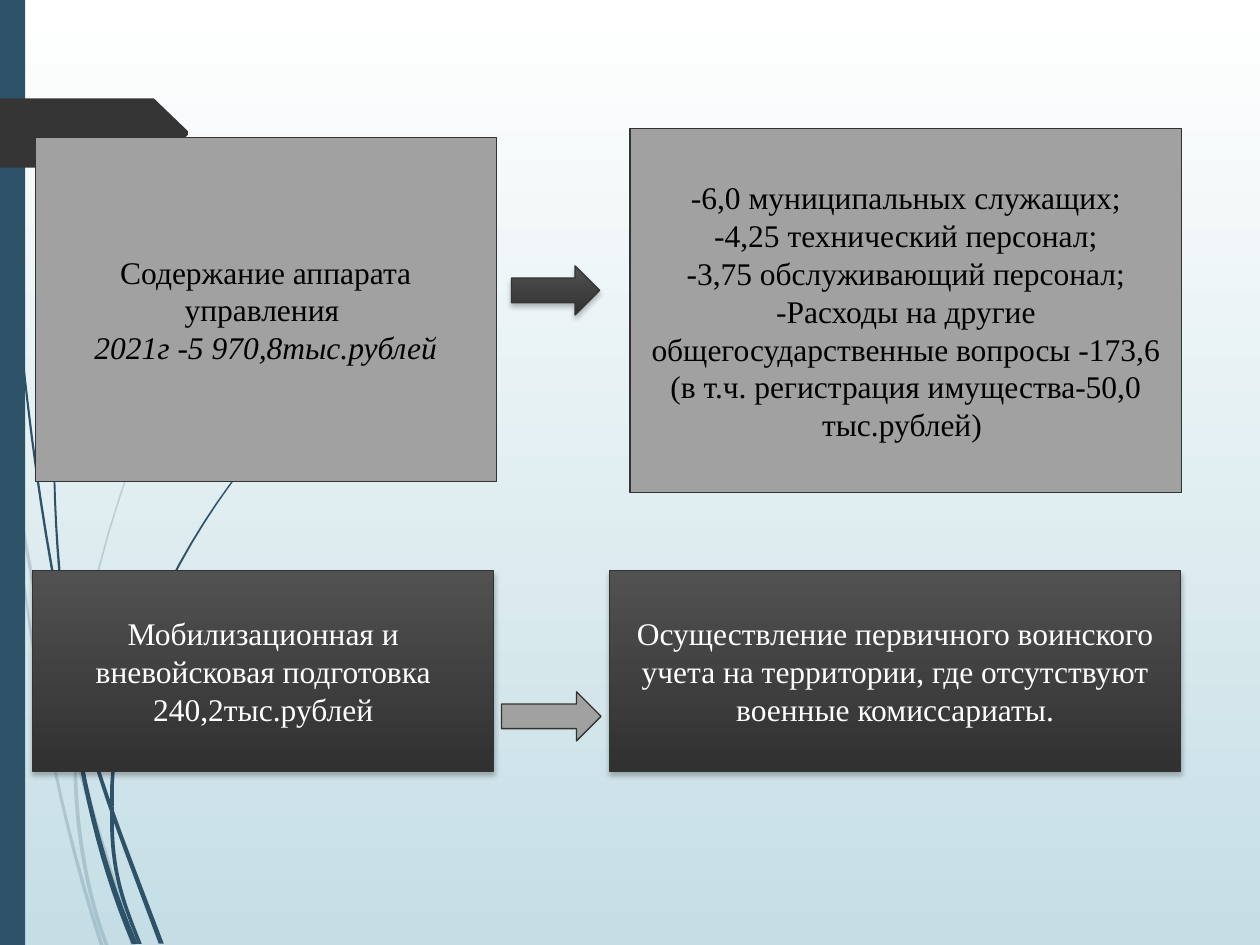
from dataclasses import dataclass

from lxml import etree
from pptx import Presentation
from pptx.dml.color import RGBColor
from pptx.enum.shapes import MSO_SHAPE
from pptx.enum.text import MSO_ANCHOR, PP_ALIGN
from pptx.oxml.ns import qn
from pptx.util import Emu, Pt

RECT, ARROW = MSO_SHAPE.RECTANGLE, MSO_SHAPE.RIGHT_ARROW
CENTER, MIDDLE = PP_ALIGN.CENTER, MSO_ANCHOR.MIDDLE
PX = 9144  # EMU in one px, 100 px to the inch
CURVE_STEPS = 18
FONT = "Times New Roman"
COLORS = {
    "sky_top": "FFFFFF", "sky_bottom": "C5DEE5", "navy": "2E5369", "tag": "353535",
    "grey": "A1A1A1", "dark_top": "515151", "dark_bottom": "313131",
    "edge": "333333", "black": "000000", "white": "FFFFFF",
}
Point = tuple[float, float]


@dataclass(frozen=True)
class Strand:
    """A cubic through four evenly timed points, tapering between two widths."""
    through: tuple[Point, Point, Point, Point]
    start_width: int
    end_width: int


@dataclass(frozen=True)
class Block:
    left: int
    top: int
    width: int
    height: int
    dark: bool
    lines: tuple[str, ...] = ()
    kind: int = RECT
    italic_last: bool = False


PALE_STRANDS = (
    Strand(((0, 290), (21, 435), (52, 570), (106, 751)), 2, 4),
    Strand(((8, 350), (20, 470), (43, 608), (81, 751)), 1, 3),
    Strand(((217, 153), (150, 262), (87, 420), (60, 590)), 0, 2),
    Strand(((60, 590), (62, 650), (71, 705), (85, 751)), 3, 3),
)
NAVY_STRANDS = (
    Strand(((2, 0), (8, 160), (22, 320), (46, 477)), 1, 2),
    Strand(((46, 477), (59, 575), (78, 665), (107, 749)), 2, 5),
    Strand(((58, 141), (47, 250), (43, 360), (49, 472)), 0, 2),
    Strand(((49, 472), (65, 565), (90, 647), (128, 749)), 2, 4),
    Strand(((216, 344), (152, 431), (105, 535), (89, 640)), 1, 3),
    Strand(((89, 640), (91, 683), (99, 717), (111, 749)), 3, 3),
)
TAG_CORNERS = [(0, 78), (122, 78), (149, 104), (149, 107), (124, 132), (121, 133), (0, 133)]

BLOCKS = (
    Block(28, 109, 366, 273, False,
          ("Содержание аппарата управления ", "2021г -5 970,8тыс.рублей"), italic_last=True),
    Block(26, 453, 366, 159, True,
          ("Мобилизационная и вневойсковая подготовка", "240,2тыс.рублей")),
    Block(500, 102, 438, 289, False,
          ("-6,0 муниципальных служащих;", "-4,25 технический персонал;",
           "-3,75 обслуживающий персонал;",
           "-Расходы на другие общегосударственные вопросы -173,6 "
           "(в т.ч. регистрация имущества-50,0 тыс.рублей) ")),
    Block(484, 453, 453, 159, True,
          ("Осуществление первичного воинского учета на территории, "
           "где отсутствуют военные комиссариаты.",)),
    Block(406, 211, 70, 39, True, kind=ARROW),
    Block(398, 549, 79, 39, False, kind=ARROW),
)


def rgb(name: str) -> RGBColor:
    return RGBColor.from_string(COLORS[name])


def fill_solid(shape, color: str) -> None:
    shape.shadow.inherit = False
    shape.fill.solid()
    shape.fill.fore_color.rgb = rgb(color)
    shape.line.fill.background()


def fill_gradient(fill, top: str, bottom: str) -> None:
    fill.gradient()
    fill.gradient_angle = 270  # counter-clockwise: runs downwards
    for stop, color in zip(fill.gradient_stops, (top, bottom)):
        stop.color.rgb = rgb(color)


def add_alpha(color_element, percent: int) -> None:
    etree.SubElement(color_element, qn("a:alpha"), val=str(percent * 1000))


def add_drop_shadow(shape) -> None:
    effects = shape.element.spPr.find(qn("a:effectLst"))
    outer = etree.SubElement(effects, qn("a:outerShdw"), blurRad=str(Pt(3)), dist=str(Pt(2)),
                             dir="5400000", rotWithShape="0")
    add_alpha(etree.SubElement(outer, qn("a:srgbClr"), val=COLORS["black"]), 25)


def strand_outline(strand: Strand) -> list[Point]:
    left, right = [], []
    for step in range(CURVE_STEPS + 1):
        t = step / CURVE_STEPS
        u = 3 * t
        weights = (-(u - 1) * (u - 2) * (u - 3) / 6, u * (u - 2) * (u - 3) / 2,
                   -u * (u - 1) * (u - 3) / 2, u * (u - 1) * (u - 2) / 6)
        x, y = (sum(w * p[axis] for w, p in zip(weights, strand.through)) for axis in (0, 1))
        half = (strand.start_width * (1 - t) + strand.end_width * t) / 2
        left.append((x - half, y))
        right.append((x + half, y))
    return left + right[::-1]


def add_outline(shapes, outline: list[Point], color: str, opacity: int = 100) -> None:
    corners = [(round(x * PX), round(y * PX)) for x, y in outline]
    builder = shapes.build_freeform(*corners[0])
    builder.add_line_segments(corners[1:], close=True)
    shape = builder.convert_to_shape()
    fill_solid(shape, color)
    if opacity < 100:
        add_alpha(shape.element.spPr.find(qn("a:solidFill"))[0], opacity)


def add_block(shapes, block: Block) -> None:
    shape = shapes.add_shape(block.kind, *(Emu(n * PX) for n in (
        block.left, block.top, block.width, block.height)))
    fill_solid(shape, "grey")
    if block.dark:
        fill_gradient(shape.fill, "dark_top", "dark_bottom")
        add_drop_shadow(shape)
    shape.line.color.rgb = rgb("edge")
    shape.line.width = Pt(0.75)
    frame = shape.text_frame
    frame.word_wrap, frame.vertical_anchor = True, MIDDLE
    for i, line in enumerate(block.lines):
        paragraph = frame.add_paragraph() if i else frame.paragraphs[0]
        paragraph.text, paragraph.alignment = line, CENTER
        font = paragraph.font
        font.name, font.size = FONT, Pt(18)
        font.color.rgb = rgb("white" if block.dark else "black")
        if block.italic_last and i == len(block.lines) - 1:
            font.italic = True


def main() -> None:
    deck = Presentation()
    deck.slide_width, deck.slide_height = Emu(1000 * PX), Emu(750 * PX)
    slide = deck.slides.add_slide(deck.slide_layouts[6])
    fill_gradient(slide.background.fill, "sky_top", "sky_bottom")

    # Strands, side band and tag
    for strands, opacity in ((PALE_STRANDS, 20), (NAVY_STRANDS, 100)):
        group = slide.shapes.add_group_shape()
        for strand in strands:
            add_outline(group.shapes, strand_outline(strand), "navy", opacity)
    band = slide.shapes.add_shape(RECT, 0, 0, Emu(20 * PX), deck.slide_height)
    fill_solid(band, "navy")
    add_outline(slide.shapes, TAG_CORNERS, "tag")

    # Expense boxes and arrows
    for block in BLOCKS:
        add_block(slide.shapes, block)
    deck.save("out.pptx")


if __name__ == "__main__":
    main()
